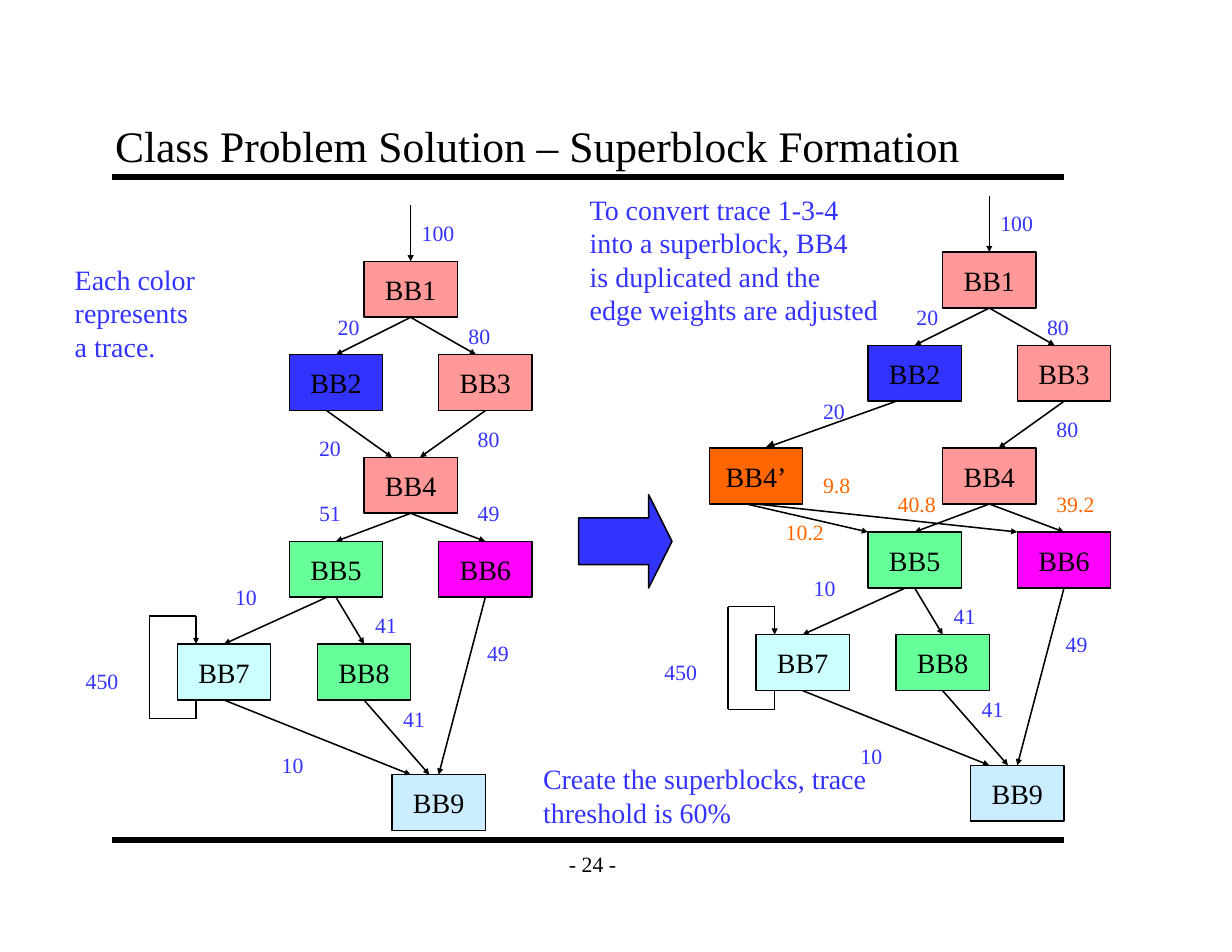
from dataclasses import dataclass

import pptx
import pptx.dml.color
import pptx.enum.shapes
import pptx.enum.text
import pptx.oxml
import pptx.oxml.ns
import pptx.util

Pt = pptx.util.Pt
ALIGN = pptx.enum.text.PP_ALIGN
ANCHOR = pptx.enum.text.MSO_ANCHOR
SHAPE = pptx.enum.shapes.MSO_SHAPE

FONT = "Times New Roman"
BLACK, BLUE, ORANGE = "000000", "3333FF", "FF6600"
PINK, GREEN, MAGENTA = "FF9999", "66FF99", "FF00FF"
CYAN, SKY = "CCFFFF", "CCECFF"
BLOCK_W, BLOCK_H = 60, 36


@dataclass
class Block:
    name: str
    x: float
    y: float
    fill: str


@dataclass
class Edge:
    x1: float
    y1: float
    x2: float
    y2: float
    head: str = "sm"  # arrowhead size, empty for none


@dataclass
class Label:
    text: str
    x: float
    y: float
    color: str = BLUE


@dataclass
class Note:
    lines: list[str]
    x: float
    y: float
    w: float


@dataclass
class Graph:
    blocks: list[Block]
    edges: list[Edge]
    labels: list[Label]


# Parts that both flow graphs share, at the position of the left one
COMMON = Graph(
    blocks=[
        Block("BB1", 234, 168, PINK),
        Block("BB2", 186, 228, BLUE),
        Block("BB3", 282, 228, PINK),
        Block("BB4", 234, 294, PINK),
        Block("BB5", 186, 348, GREEN),
        Block("BB6", 282, 348, MAGENTA),
        Block("BB7", 114, 414, CYAN),
        Block("BB8", 204, 414, GREEN),
        Block("BB9", 252, 498, SKY),
    ],
    edges=[
        Edge(264, 132, 264, 168),  # entry
        Edge(264, 204, 216, 228),
        Edge(264, 204, 306, 228),
        Edge(312, 264, 270, 294),
        Edge(264, 330, 216, 348),
        Edge(264, 330, 312, 348),
        Edge(210, 384, 144, 414),
        Edge(216, 384, 234, 414),
        Edge(144, 450, 264, 498),
        Edge(234, 450, 276, 498),
        Edge(312, 384, 282, 498),
        Edge(126, 450, 126, 462, ""),  # loop around BB7
        Edge(126, 462, 96, 462, ""),
        Edge(96, 462, 96, 396, ""),
        Edge(96, 396, 126, 396, ""),
        Edge(126, 396, 126, 414),
    ],
    labels=[
        Label("100", 264, 137.5),
        Label("20", 210, 198),
        Label("80", 294, 204),
        Label("80", 300, 270),
        Label("10", 144, 372),
        Label("41", 234, 390),
        Label("49", 306, 408),
        Label("450", 48, 426),
        Label("41", 252, 450),
        Label("10", 174, 480),
    ],
)

# Parts that only one graph has
BEFORE = Graph(
    blocks=[],
    edges=[Edge(210, 264, 252, 294)],
    labels=[Label("20", 198, 276), Label("51", 198, 318), Label("49", 300, 318)],
)
AFTER = Graph(
    blocks=[Block("BB4’", 456, 288, ORANGE)],
    edges=[
        Edge(576, 258, 492, 288, "med"),
        Edge(486, 324, 654, 342),
        Edge(480, 324, 558, 342),
    ],
    labels=[
        Label("20", 522, 252),
        Label("9.8", 522, 300, ORANGE),
        Label("40.8", 570, 312, ORANGE),
        Label("39.2", 672, 312, ORANGE),
        Label("10.2", 498, 330, ORANGE),
    ],
)

NOTES = [
    Note(["Each color represents", "a trace."], 41, 165, 169),
    Note(["To convert trace 1-3-4", "into a superblock, BB4",
          "is duplicated and the", "edge weights are adjusted"], 372, 120, 200),
    Note(["Create the superblocks, trace", "threshold is 60%"], 342, 486, 222.5),
]


def rgb(color: str) -> pptx.dml.color.RGBColor:
    return pptx.dml.color.RGBColor.from_string(color)


def add_run(p, text: str, size: float, color: str) -> None:
    r = p.add_run()
    r.text = text
    r.font.name = FONT
    r.font.size = Pt(size)
    r.font.color.rgb = rgb(color)


def add_text(slide, lines: list[str], x: float, y: float, w: float, h: float,
             size: float, color: str, align=ALIGN.LEFT, anchor=ANCHOR.TOP) -> None:
    tf = slide.shapes.add_textbox(Pt(x), Pt(y), Pt(w), Pt(h)).text_frame
    tf.word_wrap = False
    tf.vertical_anchor = anchor
    for i, line in enumerate(lines):
        p = tf.add_paragraph() if i else tf.paragraphs[0]
        p.alignment = align
        add_run(p, line, size, color)


def add_filled(slide, kind, x: float, y: float, w: float, h: float, fill: str):
    sp = slide.shapes.add_shape(kind, Pt(x), Pt(y), Pt(w), Pt(h))
    sp.shadow.inherit = False
    sp.fill.solid()
    sp.fill.fore_color.rgb = rgb(fill)
    sp.line.color.rgb = rgb(BLACK)
    sp.line.width = Pt(1)
    return sp


def add_line(slide, e: Edge, width: float = 1) -> None:
    cn = slide.shapes.add_connector(pptx.enum.shapes.MSO_CONNECTOR.STRAIGHT,
                                    Pt(e.x1), Pt(e.y1), Pt(e.x2), Pt(e.y2))
    cn.line.color.rgb = rgb(BLACK)
    cn.line.width = Pt(width)
    if e.head:
        ln = cn.line._get_or_add_ln()
        ln.append(pptx.oxml.parse_xml(
            f'<a:tailEnd {pptx.oxml.ns.nsdecls("a")} type="triangle" '
            f'w="{e.head}" len="{e.head}"/>'))
    cn._element.spPr.append(pptx.oxml.parse_xml(
        f'<a:effectLst {pptx.oxml.ns.nsdecls("a")}/>'))


def add_graph(slide, graph: Graph, dx: float = 0, dy: float = 0) -> None:
    for b in graph.blocks:
        sp = add_filled(slide, SHAPE.RECTANGLE, b.x + dx, b.y + dy, BLOCK_W, BLOCK_H, b.fill)
        tf = sp.text_frame
        tf.word_wrap = False
        tf.vertical_anchor = ANCHOR.MIDDLE
        tf.paragraphs[0].alignment = ALIGN.CENTER
        add_run(tf.paragraphs[0], b.name, 18, BLACK)
    for e in graph.edges:
        add_line(slide, Edge(e.x1 + dx, e.y1 + dy, e.x2 + dx, e.y2 + dy, e.head))
    for t in graph.labels:
        w = 14.5 + sum(3.5 if c == "." else 7 for c in t.text)
        add_text(slide, [t.text], t.x + dx, t.y + dy, w, 24, 14, t.color)


def main() -> None:
    prs = pptx.Presentation()
    prs.slide_width, prs.slide_height = Pt(792), Pt(612)
    slide = prs.slides.add_slide(prs.slide_layouts[5])

    # Title, rules and page number
    title = slide.shapes.title
    title.left, title.top, title.width, title.height = Pt(66), Pt(66), Pt(612), Pt(48)
    tf = title.text_frame
    tf.auto_size = pptx.enum.text.MSO_AUTO_SIZE.NONE
    tf.vertical_anchor = ANCHOR.BOTTOM
    tf.margin_left = tf.margin_right = Pt(8)
    tf.margin_top = tf.margin_bottom = Pt(4)
    tf.paragraphs[0].alignment = ALIGN.LEFT
    add_run(tf.paragraphs[0], "Class Problem Solution – Superblock Formation", 28, BLACK)
    for y in (114, 540):
        add_line(slide, Edge(72, y, 684, y, ""), 4)
    add_text(slide, ["- 24 -"], 354, 540, 54, 30, 14, BLACK, ALIGN.CENTER, ANCHOR.MIDDLE)

    # Flow graphs before and after, with the arrow between them
    add_graph(slide, COMMON)
    add_graph(slide, BEFORE)
    add_graph(slide, COMMON, 372, -6)
    add_graph(slide, AFTER)
    arrow = add_filled(slide, SHAPE.RIGHT_ARROW, 372, 318, 60, 60, BLUE)
    arrow.adjustments[0], arrow.adjustments[1] = 0.5, 0.25

    # Remarks
    for n in NOTES:
        add_text(slide, n.lines, n.x, n.y, n.w, 7.2 + 21.6 * len(n.lines), 18, BLUE)

    prs.save("out.pptx")


if __name__ == "__main__":
    main()
